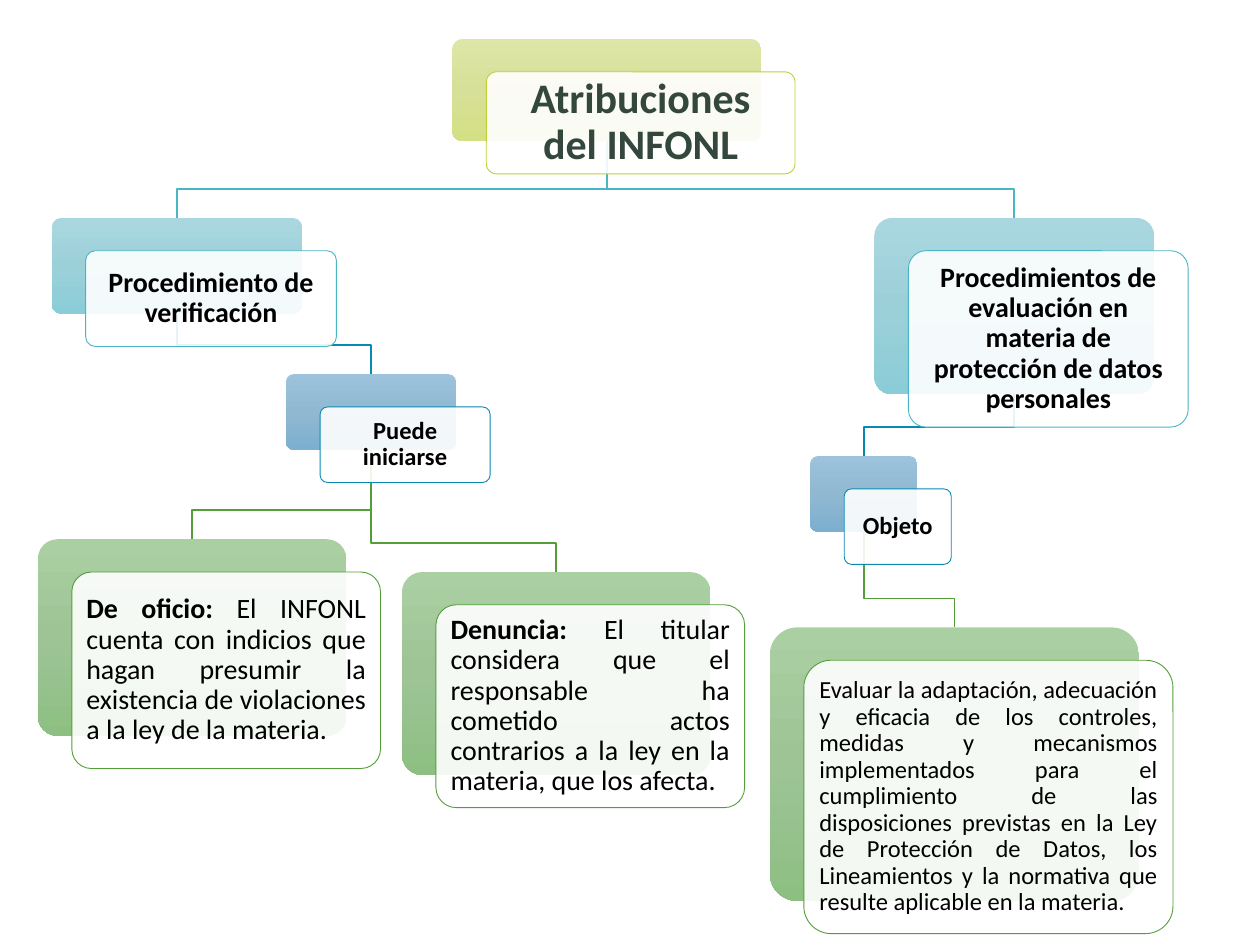
import copy

import lxml.etree
import pptx
import pptx.dml.color
import pptx.enum.shapes
import pptx.enum.text
import pptx.oxml.ns
import pptx.util

Inches = pptx.util.Inches
Pt = pptx.util.Pt
RGBColor = pptx.dml.color.RGBColor
CENTER = pptx.enum.text.PP_ALIGN.CENTER
JUSTIFY = pptx.enum.text.PP_ALIGN.JUSTIFY

BLACK = RGBColor(0x00, 0x00, 0x00)
WHITE = RGBColor(0xFF, 0xFF, 0xFF)
DARK_GREEN = RGBColor(0x34, 0x47, 0x3D)

LIME = RGBColor(0xC0, 0xCF, 0x3A)
TEAL = RGBColor(0x4A, 0xB5, 0xC4)
BLUE = RGBColor(0x09, 0x89, 0xB1)
GREEN = RGBColor(0x54, 0x9E, 0x39)

SHADES = {
    LIME: (RGBColor(0xDD, 0xE6, 0xA6), RGBColor(0xD7, 0xE0, 0x98), RGBColor(0xD4, 0xE0, 0x84)),
    TEAL: (RGBColor(0xAA, 0xD7, 0xDF), RGBColor(0x9C, 0xD0, 0xD9), RGBColor(0x8A, 0xCC, 0xD7)),
    BLUE: (RGBColor(0x9D, 0xC3, 0xDC), RGBColor(0x90, 0xB8, 0xD1), RGBColor(0x7C, 0xAF, 0xCF)),
    GREEN: (RGBColor(0xAA, 0xCF, 0xA2), RGBColor(0x9E, 0xC4, 0x96), RGBColor(0x8D, 0xBF, 0x82)),
}

ROOT = (3.59, 0.31, 2.45, 0.81)
VERIFICATION = (0.41, 1.73, 1.99, 0.76)
START = (2.27, 2.97, 1.35, 0.6)
OFFICE = (0.3, 4.28, 2.45, 1.56)
COMPLAINT = (3.19, 4.54, 2.45, 1.61)
EVALUATION = (6.94, 1.73, 2.22, 1.4)
PURPOSE = (6.43, 3.62, 0.85, 0.6)
CONTROLS = (6.11, 4.98, 2.93, 2.17)

LINKS = [
    (PURPOSE, CONTROLS, GREEN),
    (EVALUATION, PURPOSE, BLUE),
    (ROOT, EVALUATION, TEAL),
    (START, COMPLAINT, GREEN),
    (START, OFFICE, GREEN),
    (VERIFICATION, START, BLUE),
    (ROOT, VERIFICATION, TEAL),
]

NODES = [
    (ROOT, LIME, 24, 0.1, CENTER, "Atribuciones del INFONL", ""),
    (VERIFICATION, TEAL, 16, 0.07, CENTER, "Procedimiento de verificación", ""),
    (START, BLUE, 14, 0.06, CENTER, "Puede iniciarse", ""),
    (OFFICE, GREEN, 16, 0.07, JUSTIFY, "De oficio: ",
     "El INFONL cuenta con indicios que hagan presumir la existencia de "
     "violaciones a la ley de la materia."),
    (COMPLAINT, GREEN, 16, 0.07, JUSTIFY, "Denuncia: ",
     "El titular considera que el responsable ha cometido actos contrarios "
     "a la ley en la materia, que los afecta."),
    (EVALUATION, TEAL, 16, 0.07, CENTER,
     "Procedimientos de evaluación en materia de protección de datos personales", ""),
    (PURPOSE, BLUE, 14, 0.06, CENTER, "Objeto", ""),
    (CONTROLS, GREEN, 14, 0.06, JUSTIFY, "",
     "Evaluar la adaptación, adecuación y eficacia de los controles, medidas y "
     "mecanismos implementados para el cumplimiento de las disposiciones previstas "
     "en la Ley de Protección de Datos, los Lineamientos y la normativa que resulte "
     "aplicable en la materia."),
]


class Chart:
    font = "Calibri"
    corner = 0.1
    card_shift = (0.27, 0.26)
    bend_gap = 0.23

    def __init__(self, page):
        self.page = page

    def link(self, parent, child, color):
        left, top, width, height = parent
        start_x, start_y = left + width / 2, top + height
        left, top, width, height = child
        end_x, bend_y = left + width / 2, top - self.bend_gap
        builder = self.page.shapes.build_freeform(Inches(start_x), Inches(start_y))
        corners = [(start_x, bend_y), (end_x, bend_y), (end_x, top)]
        builder.add_line_segments([(Inches(x), Inches(y)) for x, y in corners], close=False)
        line = builder.convert_to_shape()
        line.shadow.inherit = False
        line.fill.background()
        line.line.color.rgb = color
        line.line.width = Pt(1)

    def rounded(self, frame):
        shape = self.page.shapes.add_shape(
            pptx.enum.shapes.MSO_SHAPE.ROUNDED_RECTANGLE, *map(Inches, frame))
        shape.adjustments[0] = self.corner
        shape.shadow.inherit = False
        return shape

    def backing(self, frame, shades):
        shape = self.rounded(frame)
        shape.line.fill.background()
        shape.fill.gradient()
        shape.fill.gradient_angle = 270
        stop_list = shape._element.xpath(".//a:gsLst")[0]
        stop_list.insert(1, copy.deepcopy(stop_list[0]))
        for stop, position, shade in zip(shape.fill.gradient_stops, (0, 0.5, 1), shades):
            stop.position = position
            stop.color.rgb = shade

    def card(self, frame, color):
        shape = self.rounded(frame)
        shape.fill.solid()
        shape.fill.fore_color.rgb = WHITE
        white = shape._element.xpath("./p:spPr/a:solidFill/a:srgbClr")[0]
        lxml.etree.SubElement(white, pptx.oxml.ns.qn("a:alpha"), val="90000")
        shape.line.color.rgb = color
        shape.line.width = Pt(0.5)

    def label(self, frame, size, margin, alignment, color, heading, body):
        left, top, width, height = frame
        inset = 0.29 * self.corner * min(width, height)
        box = self.page.shapes.add_textbox(
            Inches(left + inset), Inches(top + inset),
            Inches(width - 2 * inset), Inches(height - 2 * inset))
        text = box.text_frame
        text.word_wrap = True
        text.vertical_anchor = pptx.enum.text.MSO_ANCHOR.MIDDLE
        text.margin_left = text.margin_right = Inches(margin)
        text.margin_top = text.margin_bottom = Inches(margin)
        para = text.paragraphs[0]
        para.alignment = alignment
        para.line_spacing = 0.9
        for words, bold in ((heading, True), (body, False)):
            if words:
                span = para.add_run()
                span.text = words
                span.font.name = self.font
                span.font.size = Pt(size)
                span.font.bold = bold
                span.font.color.rgb = color

    def node(self, frame, color, size, margin, alignment, heading, body):
        left, top, width, height = frame
        shift_x, shift_y = self.card_shift
        front = (left + shift_x, top + shift_y, width, height)
        self.backing(frame, SHADES[color])
        self.card(front, color)
        text_color = DARK_GREEN if color == LIME else BLACK
        self.label(front, size, margin, alignment, text_color, heading, body)


def main():
    deck = pptx.Presentation()
    deck.slide_width = Inches(10)
    deck.slide_height = Inches(7.5)
    chart = Chart(deck.slides.add_slide(deck.slide_layouts[6]))
    for link in LINKS:
        chart.link(*link)
    for node in NODES:
        chart.node(*node)
    deck.save("out.pptx")


if __name__ == "__main__":
    main()
